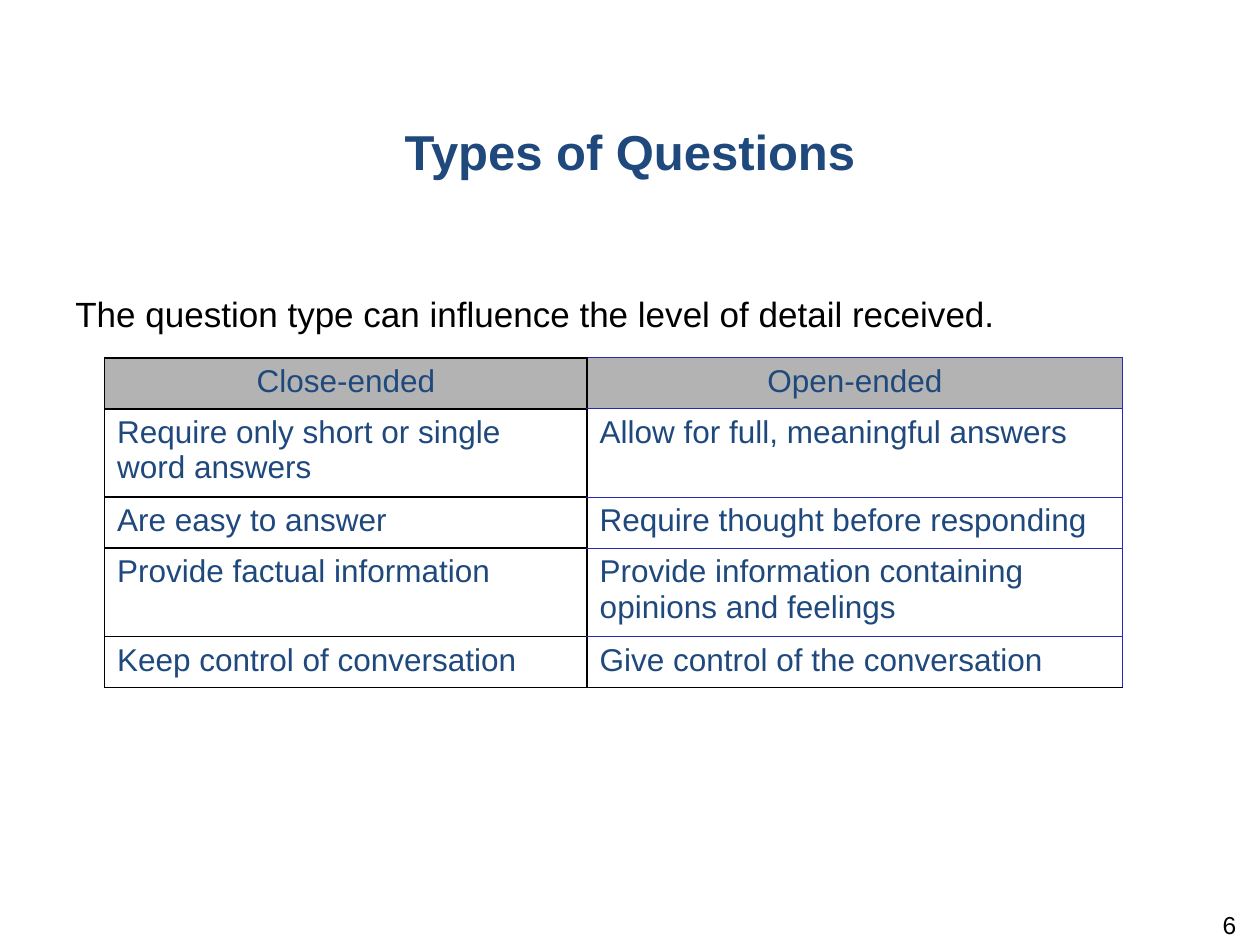
from dataclasses import dataclass

from lxml import etree
from pptx import Presentation
from pptx.dml.color import RGBColor
from pptx.enum import text as t
from pptx.oxml import ns
from pptx.util import Inches, Pt


@dataclass(frozen=True)
class Theme:
    font: str = "Arial"
    navy: str = "1F497D"
    black: str = "000000"
    header_fill: str = "B3B3B3"
    cell_fill: str = "FFFFFF"
    blue_rule: str = "2929B8"
    title_size: int = 28
    body_size: int = 20
    table_size: int = 18
    number_size: int = 14


THEME = Theme()
LEFT, CENTER, RIGHT = t.PP_ALIGN.LEFT, t.PP_ALIGN.CENTER, t.PP_ALIGN.RIGHT

COLUMN_WIDTHS = (3.83, 4.25)
ONE_LINE, TWO_LINES = 0.405, 0.7
QUESTION_ROWS = [
    (ONE_LINE, "Close-ended", "Open-ended"),
    (TWO_LINES, "Require only short or single word answers",
     "Allow for full, meaningful answers"),
    (ONE_LINE, "Are easy to answer", "Require thought before responding"),
    (TWO_LINES, "Provide factual information",
     "Provide information containing opinions and feelings"),
    (ONE_LINE, "Keep control of conversation", "Give control of the conversation"),
]


def write(frame, wording, *, size, color=THEME.black, bold=False, align=LEFT):
    """Put one formatted paragraph in a text frame."""
    paragraph = frame.paragraphs[0]
    paragraph.alignment = align
    run = paragraph.add_run()
    run.text = wording
    run.font.name = THEME.font
    run.font.size = Pt(size)
    run.font.bold = bold
    run.font.color.rgb = RGBColor.from_string(color)


def add_text(slide, wording, left, top, width, height, *, inset_top, **style):
    box = slide.shapes.add_textbox(
        Inches(left), Inches(top), Inches(width), Inches(height))
    frame = box.text_frame
    frame.word_wrap = True
    frame.vertical_anchor = t.MSO_ANCHOR.TOP
    frame.margin_top = Inches(inset_top)
    write(frame, wording, **style)


def set_borders(cell, borders):
    """Insert border lines, in schema order, before the cell's fill."""
    properties = cell._tc.get_or_add_tcPr()
    for position, side in enumerate("LRTB"):
        color, width = borders[side]
        line = etree.Element(ns.qn(f"a:ln{side}"), w=str(int(Pt(width))))
        fill = etree.SubElement(line, ns.qn("a:solidFill"))
        etree.SubElement(fill, ns.qn("a:srgbClr"), val=color)
        properties.insert(position, line)


def borders_for(row, column):
    black, blue = (THEME.black, 1), (THEME.blue_rule, 0.75)
    if column == 0:
        return dict.fromkeys("LRTB", black)
    last = row == len(QUESTION_ROWS) - 1
    return {"L": black, "R": blue, "T": blue, "B": black if last else blue}


def add_question_table(slide, left, top):
    heights = [row[0] for row in QUESTION_ROWS]
    table = slide.shapes.add_table(
        len(heights), len(COLUMN_WIDTHS), Inches(left), Inches(top),
        Inches(sum(COLUMN_WIDTHS)), Inches(sum(heights))).table
    table.first_row = table.horz_banding = False
    for column, width in zip(table.columns, COLUMN_WIDTHS):
        column.width = Inches(width)

    for r, (height, *answers) in enumerate(QUESTION_ROWS):
        table.rows[r].height = Inches(height)
        header = r == 0
        for c, answer in enumerate(answers):
            cell = table.cell(r, c)
            cell.fill.solid()
            cell.fill.fore_color.rgb = RGBColor.from_string(
                THEME.header_fill if header else THEME.cell_fill)
            write(cell.text_frame, answer, size=THEME.table_size,
                  color=THEME.navy, align=CENTER if header else LEFT)
            set_borders(cell, borders_for(r, c))


def main():
    deck = Presentation()
    deck.slide_width, deck.slide_height = Inches(10), Inches(7.5)
    slide = deck.slides.add_slide(deck.slide_layouts[6])

    # Title and lead sentence
    add_text(slide, "Types of Questions", 0, 0.87, 10, 1.19, inset_top=0.09,
             size=THEME.title_size, color=THEME.navy, bold=True, align=CENTER)
    add_text(slide, "The question type can influence the level of detail received.",
             0.5, 2.25, 9, 0.4, inset_top=0.07, size=THEME.body_size)

    # Comparison of question types
    add_question_table(slide, 0.83, 2.84)

    # Page number
    add_text(slide, "6", 7.58, 7.22, 2.33, 0.4, inset_top=0,
             size=THEME.number_size, align=RIGHT)

    deck.save("out.pptx")


if __name__ == "__main__":
    main()
